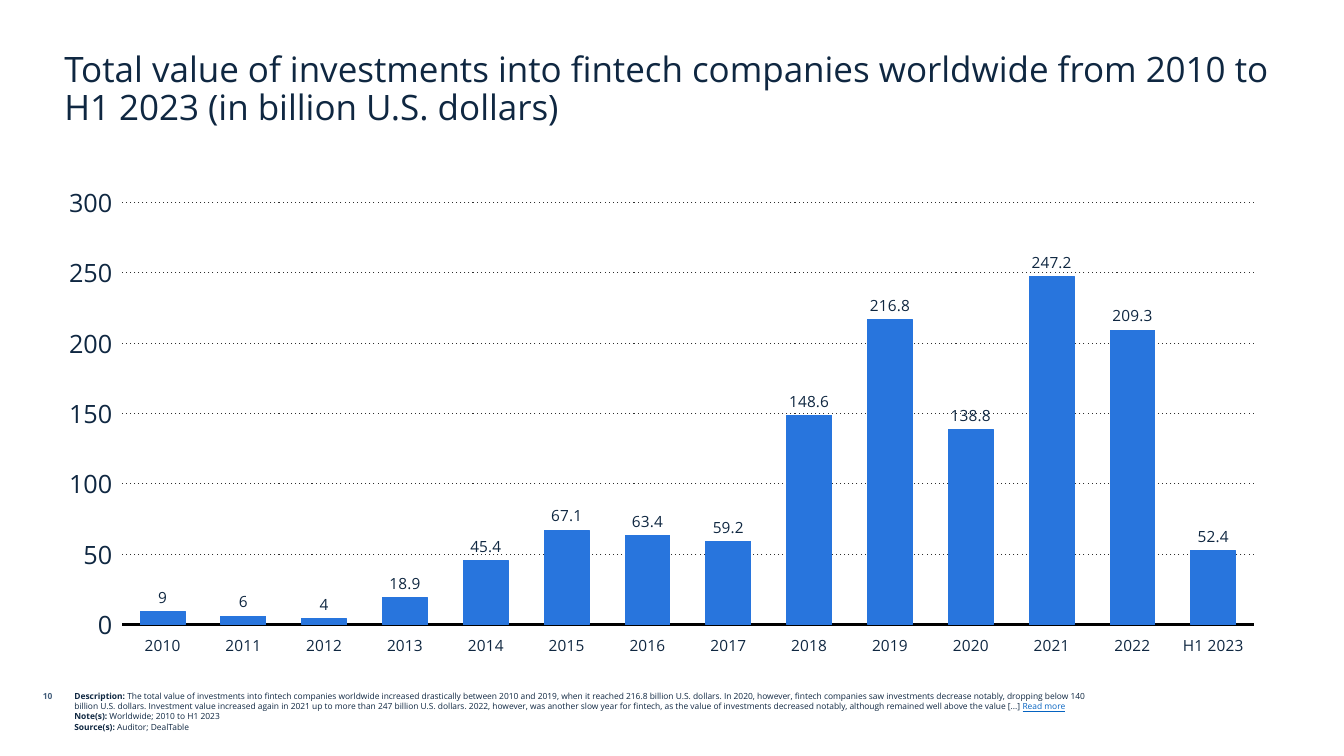
from pptx import Presentation, util as u
from pptx.chart.data import CategoryChartData
from pptx.dml.color import RGBColor
from pptx.enum import chart as ch, dml, text

NAVY = RGBColor(0x0F, 0x27, 0x41)
SLATE = RGBColor(0x45, 0x5F, 0x7C)
BLUE = RGBColor(0x28, 0x75, 0xDD)
LINK = RGBColor(0x05, 0x63, 0xC1)
GRID = RGBColor(0x2F, 0x2F, 0x2F)
BLACK = RGBColor(0, 0, 0)
FACE = "Open Sans"

INVESTMENTS = {
    "2010": 9, "2011": 6, "2012": 4, "2013": 18.9, "2014": 45.4,
    "2015": 67.1, "2016": 63.4, "2017": 59.2, "2018": 148.6, "2019": 216.8,
    "2020": 138.8, "2021": 247.2, "2022": 209.3, "H1 2023": 52.4,
}
FOOTNOTES = [
    ("Description: ",
     "The total value of investments into fintech companies worldwide increased "
     "drastically between 2010 and 2019, when it reached 216.8 billion U.S. dollars. "
     "In 2020, however, fintech companies saw investments decrease notably, dropping "
     "below 140 billion U.S. dollars. Investment value increased again in 2021 up to "
     "more than 247 billion U.S. dollars. 2022, however, was another slow year for "
     "fintech, as the value of investments decreased notably, although remained well "
     "above the value [...] "),
    ("Note(s): ", "Worldwide; 2010 to H1 2023"),
    ("Source(s): ", "Auditor; DealTable"),
]

prs = Presentation()
prs.slide_width, prs.slide_height = u.Inches(13.33), u.Inches(7.5)
slide = prs.slides.add_slide(prs.slide_layouts[6])


def area(left, top, width, height):
    """Turn percentages of the slide's size into lengths."""
    across, down = prs.slide_width / 100, prs.slide_height / 100
    return int(left * across), int(top * down), int(width * across), int(height * down)


def style(font, size, color=NAVY):
    font.name, font.size = FACE, u.Pt(size)
    font.color.rgb = color


# Title
title = slide.shapes.add_textbox(*area(4.05, 6.13, 91.82, 11.47)).text_frame
title.word_wrap = True
title.vertical_anchor = text.MSO_ANCHOR.BOTTOM
headline = title.paragraphs[0]
headline.text = ("Total value of investments into fintech companies worldwide "
                 "from 2010 to H1 2023 (in billion U.S. dollars)")
headline.line_spacing = 0.9
style(headline.font, 25)

# Column chart
data = CategoryChartData()
data.categories = list(INVESTMENTS)
data.add_series("Series 1", list(INVESTMENTS.values()))
chart = slide.shapes.add_chart(
    ch.XL_CHART_TYPE.COLUMN_CLUSTERED, *area(3.3, 23.2, 91.82, 64.8), data).chart
chart.has_legend = chart.has_title = False
style(chart.font, 18)

years, billions = chart.category_axis, chart.value_axis
for axis, size in ((years, 11), (billions, 18)):
    axis.major_tick_mark = axis.minor_tick_mark = ch.XL_TICK_MARK.NONE
    axis.tick_label_position = ch.XL_TICK_LABEL_POSITION.LOW
    style(axis.tick_labels.font, size)
years.format.line.color.rgb = BLACK
years.format.line.width = u.Pt(2)
billions.minimum_scale, billions.maximum_scale, billions.major_unit = 0, 300, 50
billions.tick_labels.number_format = "#,##0"
billions.tick_labels.number_format_is_linked = False
billions.format.line.fill.background()
gridline = billions.major_gridlines.format.line
gridline.color.rgb = GRID
gridline.width = u.Pt(0.75)
gridline.dash_style = dml.MSO_LINE.ROUND_DOT
for dash in chart.element.xpath("//c:majorGridlines//a:prstDash"):
    dash.set("val", "dot")

plot = chart.plots[0]
plot.vary_by_categories = False
plot.gap_width, plot.overlap = 80, -30
columns = plot.series[0]
columns.format.fill.solid()
columns.format.fill.fore_color.rgb = BLUE
columns.format.line.color.rgb = BLUE
columns.format.line.width = u.Pt(0.75)
values = columns.data_labels
values.show_value = True
values.position = ch.XL_LABEL_POSITION.OUTSIDE_END
style(values.font, 11)

# Footer
page = slide.shapes.add_textbox(*area(0, 90.8, 4.65, 4)).text_frame
page.word_wrap = True
number = page.paragraphs[0]
number.text = "10"
number.alignment = text.PP_ALIGN.RIGHT
style(number.font, 6, SLATE)
number.font.bold = True

notes = slide.shapes.add_textbox(*area(4.8, 90.8, 78.54, 7.73)).text_frame
notes.word_wrap = True
for index, (label, body) in enumerate(FOOTNOTES):
    note = notes.add_paragraph() if index else notes.paragraphs[0]
    style(note.font, 6)
    heading = note.add_run()
    heading.text = label
    heading.font.bold = True
    note.add_run().text = body
read_more = notes.paragraphs[0].add_run()
read_more.text = "Read more"
read_more.font.underline = True
read_more.font.color.rgb = LINK

prs.save("out.pptx")
